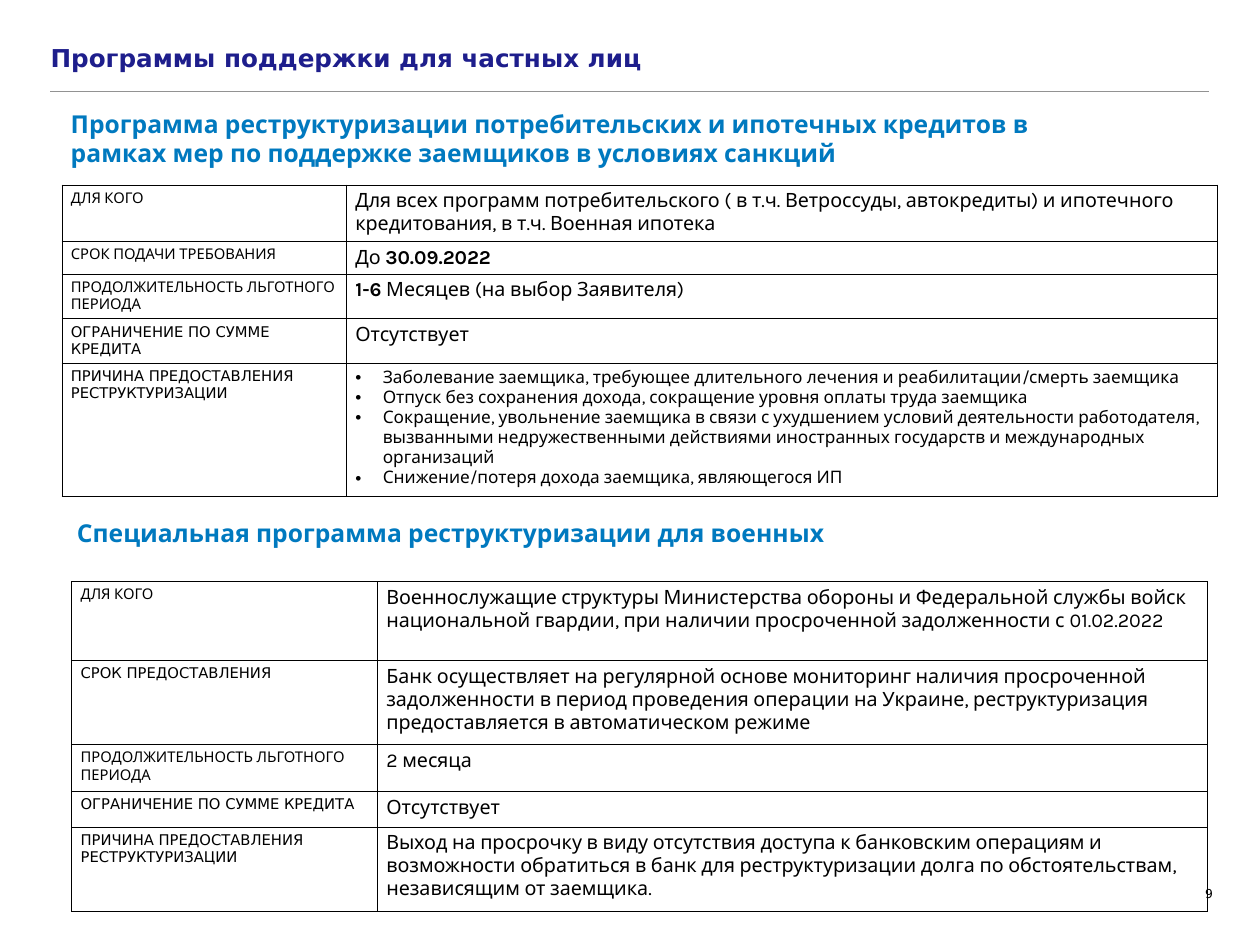
from dataclasses import dataclass

from lxml.etree import SubElement
from pptx import Presentation
from pptx.dml.color import RGBColor
from pptx.enum.shapes import MSO_CONNECTOR
from pptx.enum.text import MSO_ANCHOR, PP_ALIGN
from pptx.oxml.ns import qn
from pptx.util import Inches, Pt


@dataclass(frozen=True)
class Theme:
    plain: str = "DejaVu Sans"
    accent: str = "Karla"
    navy: RGBColor = RGBColor(0x1E, 0x1E, 0x8C)
    blue: RGBColor = RGBColor(0x00, 0x79, 0xBF)
    black: RGBColor = RGBColor(0, 0, 0)
    grey: RGBColor = RGBColor(0x92, 0x92, 0x92)
    heading: int = 20
    body: int = 16
    bullet: int = 14
    label: int = 12
    number: int = 10


theme = Theme()


def write(paragraph, text, name, size, color, bold=False):
    """Fill a paragraph; words between asterisks become bold."""
    for position, part in enumerate(text.split("*")):
        if part:
            span = paragraph.add_run()
            span.text = part
            if position % 2:
                span.font.bold = True
    font = paragraph.font
    font.name, font.size, font.bold = name, Pt(size), bold
    font.color.rgb = color


def outline(cell):
    properties = cell._tc.get_or_add_tcPr()
    for side in ("a:lnL", "a:lnR", "a:lnT", "a:lnB"):
        border = SubElement(properties, qn(side), w=str(Pt(1)))
        fill = SubElement(border, qn("a:solidFill"))
        SubElement(fill, qn("a:srgbClr"), val=str(theme.black))
    cell.fill.background()


deck = Presentation()
deck.slide_width, deck.slide_height = Inches(14.22), Inches(10.67)
page = deck.slides.add_slide(deck.slide_layouts[5])

rule = page.shapes.add_connector(
    MSO_CONNECTOR.STRAIGHT, Inches(0.57), Inches(1.03), Inches(13.65), Inches(1.03))
rule.line.color.rgb = theme.grey
rule.line.width = Pt(0.75)
SubElement(rule._element.spPr, qn("a:effectLst"))

title = page.shapes.title
title.left, title.top, title.width, title.height = (
    Inches(0.52), Inches(0.26), Inches(11.37), Inches(0.78))

# Text, box, inset, font, size, colour, bold, alignment
headings = [
    ("Программа реструктуризации потребительских и ипотечных кредитов в "
     "рамках мер по поддержке заемщиков в условиях санкций", (0.7, 1.18, 11.9, 0.77)),
    ("Специальная программа реструктуризации для военных", (0.77, 5.8, 12.4, 0.44)),
]
texts = [
    (title, "Программы поддержки для частных лиц", 0.05, theme.plain,
     theme.heading, theme.navy, True, PP_ALIGN.LEFT, MSO_ANCHOR.MIDDLE),
    (page.shapes.add_textbox(Inches(13.17), Inches(9.95), Inches(0.57), Inches(0.27)),
     "9", 0.05, theme.plain, theme.number, theme.black, False,
     PP_ALIGN.RIGHT, MSO_ANCHOR.MIDDLE),
]
for text, place in headings:
    box = page.shapes.add_textbox(*map(Inches, place))
    texts.append((box, text, 0.1, theme.accent, theme.heading, theme.blue, True,
                  PP_ALIGN.LEFT, MSO_ANCHOR.TOP))

for box, text, inset, name, size, color, bold, alignment, anchor in texts:
    frame = box.text_frame
    frame.word_wrap = True
    frame.vertical_anchor = anchor
    frame.margin_left = frame.margin_right = Inches(inset)
    frame.margin_top = frame.margin_bottom = Inches(0.05)
    para = frame.paragraphs[0]
    para.alignment = alignment
    write(para, text, name, size, color, bold)

# Each row: height, label font, label, content (a list is bulleted)
consumer_rows = [
    (0.64, theme.accent, "ДЛЯ КОГО",
     "Для всех программ потребительского ( в т.ч. Ветроссуды, автокредиты) и "
     "ипотечного кредитования, в т.ч. Военная ипотека"),
    (0.37, theme.accent, "СРОК ПОДАЧИ ТРЕБОВАНИЯ", "До *30.09.2022*"),
    (0.5, theme.accent, "ПРОДОЛЖИТЕЛЬНОСТЬ ЛЬГОТНОГО ПЕРИОДА",
     "*1-6* Месяцев (на выбор Заявителя)"),
    (0.5, theme.plain, "ОГРАНИЧЕНИЕ ПО СУММЕ КРЕДИТА", "Отсутствует"),
    (1.49, theme.plain, "ПРИЧИНА ПРЕДОСТАВЛЕНИЯ РЕСТРУКТУРИЗАЦИИ", [
        "Заболевание заемщика, требующее длительного лечения и "
        "реабилитации/смерть заемщика",
        "Отпуск без сохранения дохода, сокращение уровня оплаты труда заемщика",
        "Сокращение, увольнение заемщика в связи с ухудшением условий деятельности "
        "работодателя, вызванными недружественными действиями иностранных государств "
        "и международных организаций",
        "Снижение/потеря дохода заемщика, являющегося ИП",
    ]),
]
military_rows = [
    (0.89, theme.accent, "ДЛЯ КОГО",
     "Военнослужащие структуры Министерства обороны и Федеральной службы войск "
     "национальной гвардии, при наличии просроченной задолженности с 01.02.2022"),
    (0.95, theme.plain, "СРОК ПРЕДОСТАВЛЕНИЯ",
     "Банк осуществляет на регулярной основе мониторинг наличия просроченной "
     "задолженности в период проведения операции на Украине, реструктуризация "
     "предоставляется в автоматическом режиме"),
    (0.53, theme.accent, "ПРОДОЛЖИТЕЛЬНОСТЬ ЛЬГОТНОГО ПЕРИОДА", "2 месяца"),
    (0.4, theme.plain, "ОГРАНИЧЕНИЕ ПО СУММЕ КРЕДИТА", "Отсутствует"),
    (0.95, theme.plain, "ПРИЧИНА ПРЕДОСТАВЛЕНИЯ РЕСТРУКТУРИЗАЦИИ",
     "Выход на просрочку в виду отсутствия доступа к банковским операциям и "
     "возможности обратиться в банк для реструктуризации долга по обстоятельствам, "
     "независящим от заемщика."),
]
programs = [
    (0.7, 2.09, (3.21, 9.83), consumer_rows),
    (0.81, 6.57, (3.45, 9.37), military_rows),
]
for left, top, widths, rows in programs:
    height = sum(row[0] for row in rows)
    table = page.shapes.add_table(
        len(rows), 2, Inches(left), Inches(top),
        Inches(sum(widths)), Inches(height)).table
    table.first_row = table.horz_banding = False
    for column, width in zip(table.columns, widths):
        column.width = Inches(width)
    for row, (row_height, label_font, label, content) in zip(table.rows, rows):
        row.height = Inches(row_height)
        label_cell, content_cell = row.cells
        outline(label_cell)
        outline(content_cell)
        write(label_cell.text_frame.paragraphs[0], label, label_font,
              theme.label, theme.black)
        frame = content_cell.text_frame
        if isinstance(content, str):
            write(frame.paragraphs[0], content, theme.accent, theme.body, theme.black)
            continue
        for index, item in enumerate(content):
            para = frame.add_paragraph() if index else frame.paragraphs[0]
            properties = para._p.get_or_add_pPr()
            properties.set("marL", str(Inches(0.31)))
            properties.set("indent", str(-Inches(0.31)))
            SubElement(properties, qn("a:buFont"), typeface="Arial")
            SubElement(properties, qn("a:buChar"), char="•")
            write(para, item, theme.accent, theme.bullet, theme.black)

deck.save("out.pptx")
